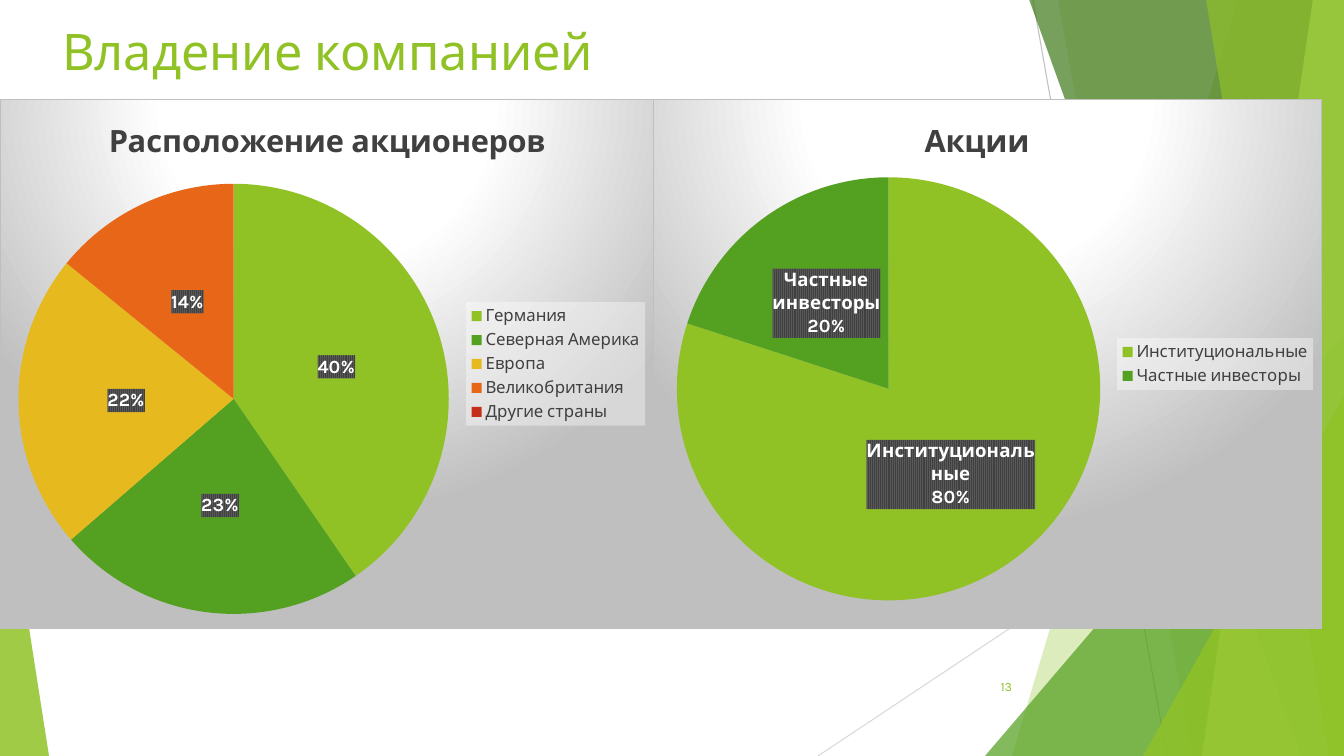
import pptx
import pptx.chart.data
import pptx.dml.color
import pptx.enum.chart
import pptx.enum.shapes
import pptx.enum.text
import pptx.oxml
import pptx.oxml.ns
import pptx.util

RGB = pptx.dml.color.RGBColor
GREEN = RGB(0x90, 0xC2, 0x26)
LEAF = RGB(0x54, 0xA0, 0x21)
FOREST = RGB(0x3F, 0x78, 0x19)
LIME = RGB(0xC0, 0xE4, 0x74)
GOLD = RGB(0xE6, 0xB9, 0x1E)
ORANGE = RGB(0xE7, 0x66, 0x18)
RED = RGB(0xC4, 0x2F, 0x1A)
WHITE = RGB(0xFF, 0xFF, 0xFF)
BLACK = RGB(0, 0, 0)
DARK = RGB(0x40, 0x40, 0x40)
GRAY = RGB(0x59, 0x59, 0x59)
SILVER = RGB(0xBF, 0xBF, 0xBF)
PALE = RGB(0xD9, 0xD9, 0xD9)

PX = 914400 / 100.8
W, H = 1344, 756
SLICES = [GREEN, LEAF, GOLD, ORANGE, RED]
NS = pptx.oxml.ns.nsdecls("c", "a")

CHART_FILL = f"""<c:spPr {NS}><a:gradFill><a:gsLst>
<a:gs pos="0"><a:srgbClr val="{WHITE}"/></a:gs>
<a:gs pos="39000"><a:srgbClr val="{WHITE}"/></a:gs>
<a:gs pos="100000"><a:srgbClr val="{SILVER}"/></a:gs></a:gsLst>
<a:path path="circle"><a:fillToRect l="50000" t="-80000" r="50000" b="180000"/></a:path>
</a:gradFill><a:ln w="9525"><a:solidFill><a:srgbClr val="{SILVER}"/></a:solidFill></a:ln></c:spPr>"""
LEGEND_FILL = f"""<c:spPr {NS}><a:solidFill><a:srgbClr val="{WHITE}"><a:alpha val="39000"/>
</a:srgbClr></a:solidFill></c:spPr>"""
LABEL_FILL = f"""<c:spPr {NS}><a:pattFill prst="ltVert"><a:fgClr><a:srgbClr val="{DARK}"/></a:fgClr>
<a:bgClr><a:srgbClr val="{GRAY}"/></a:bgClr></a:pattFill></c:spPr>"""


def px(*lengths):
    """Turn px lengths into EMU."""
    return [pptx.util.Emu(round(n * PX)) for n in lengths]


def assign(obj, **values):
    """Set each given attribute on an object."""
    for name, value in values.items():
        setattr(obj, name, value)


def set_font(font, size, color, bold=False):
    """Format a font."""
    assign(font, name="Karla", size=pptx.util.Pt(size), bold=bold)
    font.color.rgb = color


def set_area(parent, xml):
    """Put shape properties before the text properties of a chart part."""
    parent.find(pptx.oxml.ns.qn("c:txPr")).addprevious(pptx.oxml.parse_xml(xml))


def paint(sp, color, opacity):
    """Give a shape a translucent fill without line or shadow."""
    sp.shadow.inherit = False
    sp.line.fill.background()
    sp.fill.solid()
    sp.fill.fore_color.rgb = color
    clr = sp.fill._xPr.find(".//" + pptx.oxml.ns.qn("a:srgbClr"))
    alpha = pptx.oxml.parse_xml(f'<a:alpha {NS} val="{opacity * 1000}"/>')
    clr.append(alpha)


def add_line(slide, x1, y1, x2, y2, color):
    """Draw a thin line."""
    line = slide.shapes.add_connector(
        pptx.enum.shapes.MSO_CONNECTOR.STRAIGHT, *px(x1, y1, x2, y2))
    line.line.color.rgb = color
    line.line.width = pptx.util.Pt(0.75)
    line._element.spPr.append(pptx.oxml.parse_xml(f"<a:effectLst {NS}/>"))


def add_band(slide, top, bottom, color, opacity):
    """Draw a full-height band from a slanted left edge to the right border."""
    fb = slide.shapes.build_freeform(top, -1, scale=PX)
    fb.add_line_segments([(W, -1), (W, H), (bottom, H)], close=True)
    paint(fb.convert_to_shape(), color, opacity)


def add_wedge(slide, x, y, w, apex, color, opacity):
    """Draw a triangle that stands on the bottom border."""
    sp = slide.shapes.add_shape(
        pptx.enum.shapes.MSO_SHAPE.ISOSCELES_TRIANGLE, *px(x, y, w, H - y))
    sp.adjustments[0] = apex
    paint(sp, color, opacity)


def add_facets(slide):
    """Draw the translucent facets at the slide borders."""
    add_line(slide, 1033, 0, 1167, H, SILVER)
    add_line(slide, W, 406, 818, H, PALE)
    add_band(slide, 1238, 1012, GREEN, 30)
    add_band(slide, 1058, 1192, GREEN, 20)
    add_wedge(slide, 985, 336, 359, 1, LEAF, 72)
    add_band(slide, 1029, 1301, FOREST, 70)
    add_band(slide, 1313, 1202, LIME, 70)
    add_band(slide, 1206, 1329, GREEN, 65)
    add_wedge(slide, 1143, 396, 201, 1, GREEN, 80)
    add_wedge(slide, 0, 442, 49, 0, GREEN, 85)


def add_pie(slide, box, title, data, plot_box, show_names):
    """Draw a titled pie chart with a legend in the given box."""
    cd = pptx.chart.data.CategoryChartData()
    cd.categories = list(data)
    cd.add_series(title, list(data.values()))
    chart = slide.shapes.add_chart(
        pptx.enum.chart.XL_CHART_TYPE.PIE, *px(*box), cd).chart
    set_font(chart.font, 10, BLACK)
    set_area(chart._chartSpace, CHART_FILL)

    chart.has_title = True
    chart.chart_title.include_in_layout = False
    p = chart.chart_title.text_frame.paragraphs[0]
    r = p.add_run()
    r.text = title
    set_font(r.font, 22, DARK, True)

    chart.has_legend = True
    legend = chart.legend
    assign(legend, position=pptx.enum.chart.XL_LEGEND_POSITION.RIGHT, include_in_layout=False)
    set_font(legend.font, 12, DARK)
    set_area(legend._element, LEGEND_FILL)

    plot = chart.plots[0]
    plot.vary_by_categories = True
    series = plot.series[0]
    for i, color in enumerate(SLICES[:len(data)]):
        fill = series.points[i].format.fill
        fill.solid()
        fill.fore_color.rgb = color

    labels = series.data_labels
    assign(labels, show_value=False, show_percentage=True, show_category_name=show_names,
           number_format="0%", number_format_is_linked=False,
           position=pptx.enum.chart.XL_LABEL_POSITION.CENTER)
    set_font(labels.font, 13.3, WHITE, True)
    set_area(labels._element, LABEL_FILL)
    last = labels._element.find(pptx.oxml.ns.qn("c:showBubbleSize"))
    last.addnext(pptx.oxml.parse_xml(f"<c:separator {NS}>\n</c:separator>"))

    area = chart._chartSpace.chart.plotArea
    for old in area.findall(pptx.oxml.ns.qn("c:layout")):
        area.remove(old)
    sizes = "".join(f'<c:{k} val="{n / whole}"/>'
                    for k, n, whole in zip("xywh", plot_box, box[2:] * 2))
    area.insert(0, pptx.oxml.parse_xml(
        f'<c:layout {NS}><c:manualLayout><c:layoutTarget val="inner"/>'
        f'<c:xMode val="edge"/><c:yMode val="edge"/>{sizes}</c:manualLayout></c:layout>'))


def add_title(slide, box, text):
    """Place and format the slide title."""
    sp = slide.shapes.title
    assign(sp, **dict(zip(("left", "top", "width", "height"), px(*box))))
    tf = sp.text_frame
    assign(tf, text=text, vertical_anchor=pptx.enum.text.MSO_ANCHOR.TOP,
           auto_size=pptx.enum.text.MSO_AUTO_SIZE.NONE, word_wrap=True)
    p = tf.paragraphs[0]
    p.alignment = pptx.enum.text.PP_ALIGN.LEFT
    set_font(p.runs[0].font, 36, GREEN)


def add_number(slide, box, text):
    """Write the slide number."""
    tf = slide.shapes.add_textbox(*px(*box)).text_frame
    assign(tf, text=text, word_wrap=True, vertical_anchor=pptx.enum.text.MSO_ANCHOR.MIDDLE)
    p = tf.paragraphs[0]
    p.alignment = pptx.enum.text.PP_ALIGN.RIGHT
    set_font(p.runs[0].font, 9, GREEN)


def main():
    """Build the ownership slide."""
    prs = pptx.Presentation()
    prs.slide_width, prs.slide_height = px(W, H)
    slide = prs.slides.add_slide(prs.slide_layouts[5])
    add_facets(slide)
    add_title(slide, (52, 15, 1159, 146), "Владение компанией")
    add_pie(slide, (632, 99, 690, 530), "Акции",
            {"Институциональные": 80, "Частные инвесторы": 20},
            (17, 78, 479, 424), True)
    add_number(slide, (946, 667, 76, 40), "13")
    add_pie(slide, (0, 99, 654, 530), "Расположение акционеров",
            {"Германия": 40, "Северная Америка": 23, "Европа": 22,
             "Великобритания": 14, "Другие страны": 0},
            (18, 84, 431, 432), False)
    prs.save("out.pptx")


if __name__ == "__main__":
    main()
